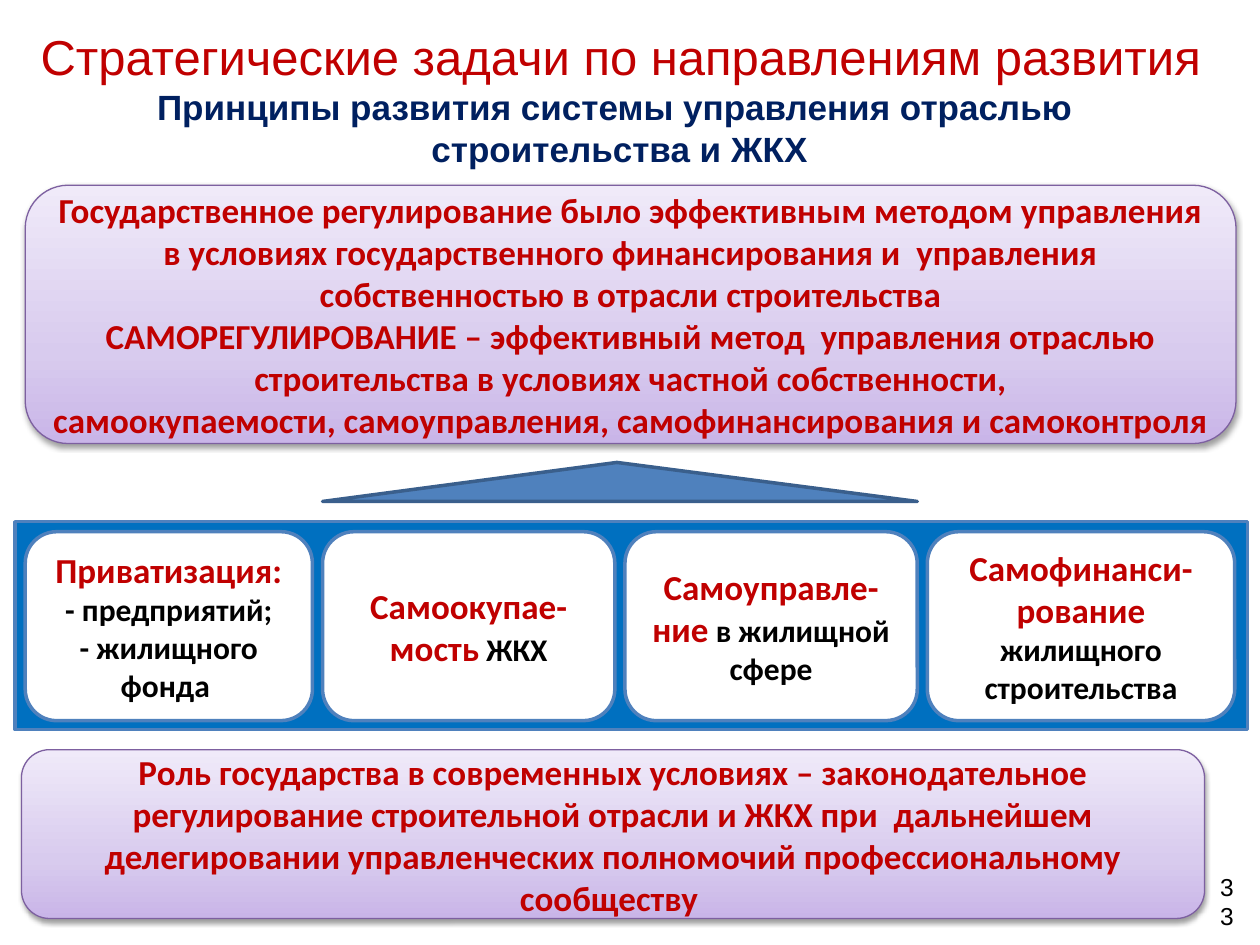
from lxml import etree
from pptx import Presentation
from pptx.dml.color import RGBColor
from pptx.enum.shapes import MSO_SHAPE
from pptx.enum.text import MSO_ANCHOR, PP_ALIGN
from pptx.oxml import parse_xml
from pptx.oxml.ns import nsdecls, qn
from pptx.util import Inches, Pt

RECTANGLE = MSO_SHAPE.RECTANGLE
ROUNDED = MSO_SHAPE.ROUNDED_RECTANGLE
TRIANGLE = MSO_SHAPE.ISOSCELES_TRIANGLE
CENTER, RIGHT = PP_ALIGN.CENTER, PP_ALIGN.RIGHT
MIDDLE = MSO_ANCHOR.MIDDLE

RED, NAVY, BLACK, WHITE = "C00000", "002060", "000000", "FFFFFF"
BLUE, BAND_BLUE, DARK_BLUE, PURPLE = "4F81BD", "0070C0", "3A5F8C", "7D60A0"
LILAC_STOPS = [(0, "C9B5E8"), (35, "D8CBEE"), (100, "F0EAF9")]

TITLE = dict(name="Arial", size=Pt(28), color=RED, bold=False)
SUBTITLE = dict(name="Arial", size=Pt(20), color=NAVY, bold=True)
NUMBER = dict(name="Arial", size=Pt(14), color=BLACK, bold=False)
KEY = dict(name="Calibri", size=Pt(20), color=RED, bold=True)
DETAIL = dict(name="Calibri", size=Pt(18), color=BLACK, bold=True)

REGULATION = [
    "Государственное регулирование было эффективным методом управления в условиях "
    "государственного финансирования и  управления собственностью в отрасли строительства",
    "САМОРЕГУЛИРОВАНИЕ – эффективный метод  управления отраслью "
    "строительства в условиях частной собственности,",
    "самоокупаемости, самоуправления, самофинансирования и самоконтроля",
]
STATE_ROLE = [
    "Роль государства в современных условиях – законодательное регулирование "
    "строительной отрасли и ЖКХ при  дальнейшем делегировании управленческих "
    "полномочий профессиональному сообществу "
]
# Each card: width and paragraphs of (text, format) spans
CARDS = [
    (2.28, [[("Приватизация:", KEY)], [("- предприятий;", DETAIL)],
            [("- жилищного фонда ", DETAIL)]]),
    (2.32, [[("Самоокупае-мость", KEY), (" ЖКХ", DETAIL)]]),
    (2.32, [[("Самоуправле-ние", KEY), (" в жилищной сфере", DETAIL)]]),
    (2.44, [[("Самофинанси-рование ", KEY), ("жилищного строительства", DETAIL)]]),
]
CARD_LEFT, CARD_TOP, CARD_HEIGHT, CARD_GAP = 0.2, 4.22, 1.5, 0.08


def rgb(color):
    return RGBColor.from_string(color)


def format_span(span, style):
    for key, value in style.items():
        if key == "color":
            span.font.color.rgb = rgb(value)
        else:
            setattr(span.font, key, value)


def write(shape, paragraphs, align=CENTER):
    """Fill a shape with paragraphs, each a list of (text, format) spans."""
    frame = shape.text_frame
    frame.word_wrap = True
    frame.vertical_anchor = MIDDLE
    for index, spans in enumerate(paragraphs):
        para = frame.add_paragraph() if index else frame.paragraphs[0]
        para.alignment = align
        for text, style in spans:
            for number, line in enumerate(text.split("\n")):
                if number:
                    para.add_line_break()
                span = para.add_run()
                span.text = line
                format_span(span, style)


def add_box(page, kind, place, fill, line, width):
    box = page.shapes.add_shape(kind, *map(Inches, place))
    box.shadow.inherit = False
    box.fill.solid()
    box.fill.fore_color.rgb = rgb(fill)
    box.line.color.rgb = rgb(line)
    box.line.width = Pt(width)
    return box


def add_text(page, place, text, style, align=CENTER):
    box = page.shapes.add_textbox(*map(Inches, place))
    write(box, [[(text, style)]], align)
    return box


def add_lilac_panel(page, place, texts):
    """Add a rounded panel with a three-stop gradient and a soft shadow."""
    panel = add_box(page, ROUNDED, place, WHITE, PURPLE, 0.75)
    stops = "".join(
        f'<a:gs pos="{position * 1000}"><a:srgbClr val="{color}"/></a:gs>'
        for position, color in LILAC_STOPS)
    gradient = parse_xml(
        f'<a:gradFill {nsdecls("a")} rotWithShape="1"><a:gsLst>{stops}</a:gsLst>'
        '<a:lin ang="16200000" scaled="0"/></a:gradFill>')
    properties = panel.element.spPr
    properties.replace(properties.find(qn("a:solidFill")), gradient)
    shadow = etree.SubElement(
        properties.find(qn("a:effectLst")), qn("a:outerShdw"),
        blurRad=str(Pt(3.1)), dist=str(Pt(1.6)), dir="5400000", rotWithShape="0")
    color = etree.SubElement(shadow, qn("a:srgbClr"), val=BLACK)
    etree.SubElement(color, qn("a:alpha"), val="38000")
    write(panel, [[(text, KEY)] for text in texts])


def add_title(page, place, text):
    title = page.shapes.title
    title.left, title.top, title.width, title.height = map(Inches, place)
    write(title, [[(text, TITLE)]])


def add_cards(page):
    left = CARD_LEFT
    for width, paragraphs in CARDS:
        place = (left, CARD_TOP, width, CARD_HEIGHT)
        write(add_box(page, ROUNDED, place, WHITE, BLUE, 2), paragraphs)
        left += width + CARD_GAP


def add_page_number(page, text):
    """Add the number in a turned box whose vertical text reads upright."""
    box = add_text(page, (9.36, 6.95, 0.66, 0.4), text, NUMBER, RIGHT)
    box.rotation = 270
    box.text_frame._txBody.bodyPr.set("vert", "vert")


def main():
    deck = Presentation()
    deck.slide_width, deck.slide_height = Inches(10), Inches(7.5)
    page = deck.slides.add_slide(deck.slide_layouts[5])
    add_title(page, (0.11, 0.03, 9.63, 0.83),
              "Стратегические задачи по направлениям развития")
    add_box(page, RECTANGLE, (0.12, 4.14, 9.78, 1.65), BAND_BLUE, BLUE, 2)
    add_page_number(page, "33")
    add_lilac_panel(page, (0.2, 1.47, 9.61, 2.05), REGULATION)
    add_text(page, (-0.12, 0.6, 10, 0.83),
             "Принципы развития системы управления отраслью\n строительства и ЖКХ",
             SUBTITLE)
    add_cards(page)
    arrow = add_box(page, TRIANGLE, (2.56, 3.67, 4.72, 0.31), BLUE, DARK_BLUE, 2)
    arrow.adjustments[0] = 0.495
    add_lilac_panel(page, (0.17, 5.95, 9.39, 1.34), STATE_ROLE)
    deck.save("out.pptx")


if __name__ == "__main__":
    main()
